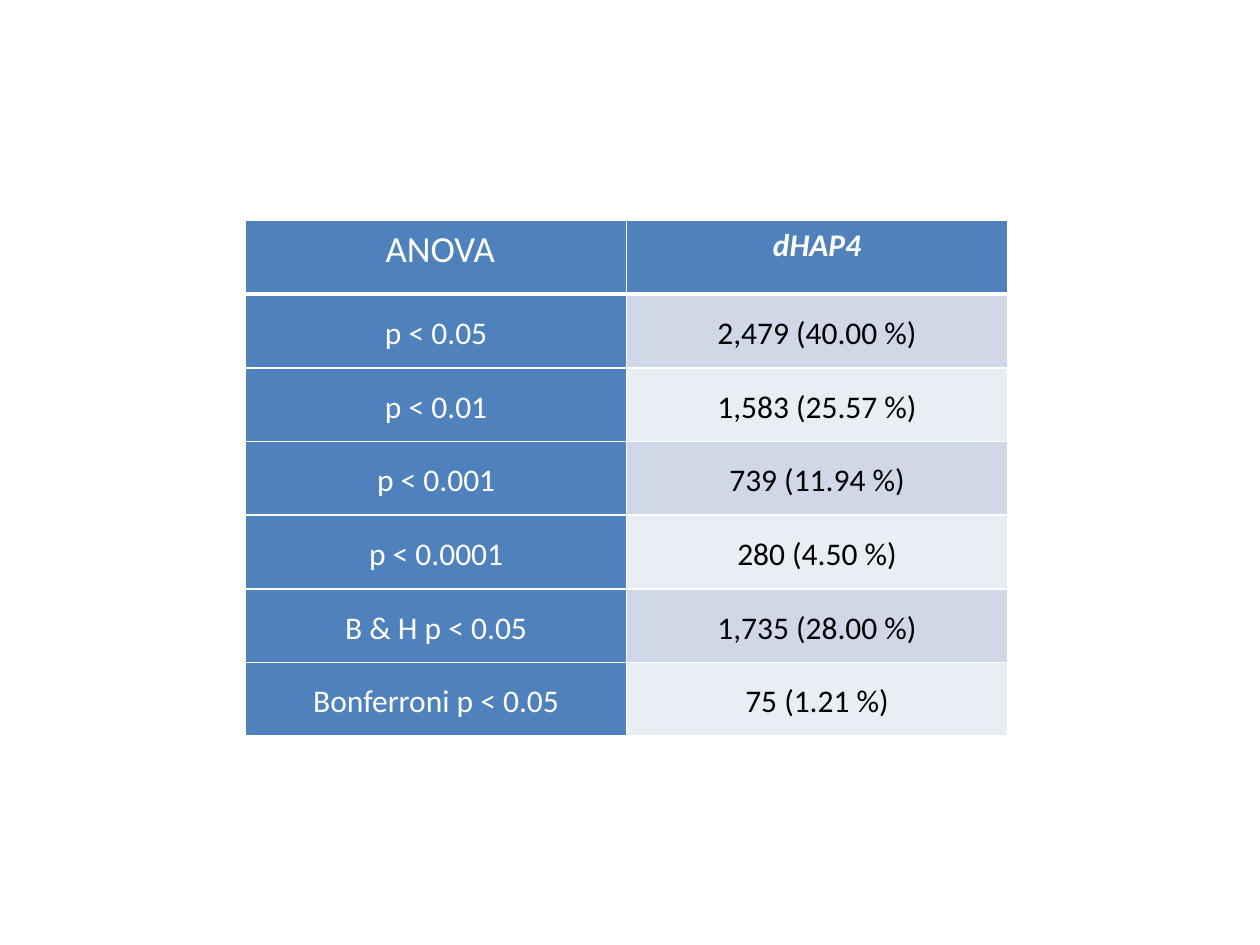
from lxml.etree import SubElement
from pptx import Presentation
from pptx.dml.color import RGBColor
from pptx.enum.text import MSO_ANCHOR, PP_ALIGN
from pptx.oxml.ns import qn
from pptx.util import Pt

HEADER = (" ANOVA", "dHAP4")
RESULTS = [
    ("p < 0.05", "2,479 (40.00 %)"),
    ("p < 0.01", "1,583 (25.57 %)"),
    ("p < 0.001", "739 (11.94 %)"),
    ("p < 0.0001", "280 (4.50 %)"),
    ("B & H p < 0.05", "1,735 (28.00 %)"),
    ("Bonferroni p < 0.05", "75 (1.21 %)"),
]
THEME = {
    "font": "Calibri", "size": 18, "title_size": 21,
    "accent": "4F81BD", "bands": ("D0D8E8", "E9EDF4"),
    "light": "FFFFFF", "dark": "000000",
    "rule": 1, "header_rule": 3,
}
LEFT, TOP = 140.4, 126
COLUMN_WIDTH, ROW_HEIGHT = 217.7, 42.1
SIDE_MARGIN = 5


def write(cell, text, color=THEME["light"], size=THEME["size"], bold=False,
          italic=False, anchor=MSO_ANCHOR.MIDDLE):
    cell.vertical_anchor = anchor
    cell.margin_left = cell.margin_right = Pt(SIDE_MARGIN)
    cell.margin_top = cell.margin_bottom = Pt(0)
    paragraph = cell.text_frame.paragraphs[0]
    paragraph.alignment = PP_ALIGN.CENTER
    paragraph.line_spacing = 1.15
    run = paragraph.add_run()
    run.text = text
    font = run.font
    font.name, font.size = THEME["font"], Pt(size)
    font.bold, font.italic = bold, italic
    font.color.rgb = RGBColor.from_string(color)


def paint(cell, fill, bottom_rule=THEME["rule"]):
    """Draw the cell borders, then the fill, in the order the schema needs."""
    properties = cell._tc.get_or_add_tcPr()
    for side in "LRTB":
        width = bottom_rule if side == "B" else THEME["rule"]
        border = SubElement(properties, qn(f"a:ln{side}"), w=str(Pt(width)))
        solid = SubElement(border, qn("a:solidFill"))
        SubElement(solid, qn("a:srgbClr"), val=THEME["light"])
    cell.fill.solid()
    cell.fill.fore_color.rgb = RGBColor.from_string(fill)


def main():
    presentation = Presentation()
    presentation.slide_width, presentation.slide_height = Pt(720), Pt(540)
    slide = presentation.slides.add_slide(presentation.slide_layouts[6])

    row_count, column_count = len(RESULTS) + 1, len(HEADER)
    table = slide.shapes.add_table(
        row_count, column_count, Pt(LEFT), Pt(TOP),
        Pt(COLUMN_WIDTH * column_count), Pt(ROW_HEIGHT * row_count)).table
    table.first_row = table.horz_banding = False
    for column in table.columns:
        column.width = Pt(COLUMN_WIDTH)
    for row in table.rows:
        row.height = Pt(ROW_HEIGHT)

    test, strain = HEADER
    write(table.cell(0, 0), test, size=THEME["title_size"], anchor=MSO_ANCHOR.TOP)
    write(table.cell(0, 1), strain, bold=True, italic=True, anchor=MSO_ANCHOR.TOP)
    for column in range(column_count):
        paint(table.cell(0, column), THEME["accent"], THEME["header_rule"])

    for index, (threshold, count) in enumerate(RESULTS):
        threshold_cell, count_cell = table.rows[index + 1].cells
        write(threshold_cell, threshold)
        paint(threshold_cell, THEME["accent"])
        write(count_cell, count, color=THEME["dark"])
        paint(count_cell, THEME["bands"][index % 2])

    presentation.save("out.pptx")


if __name__ == "__main__":
    main()
